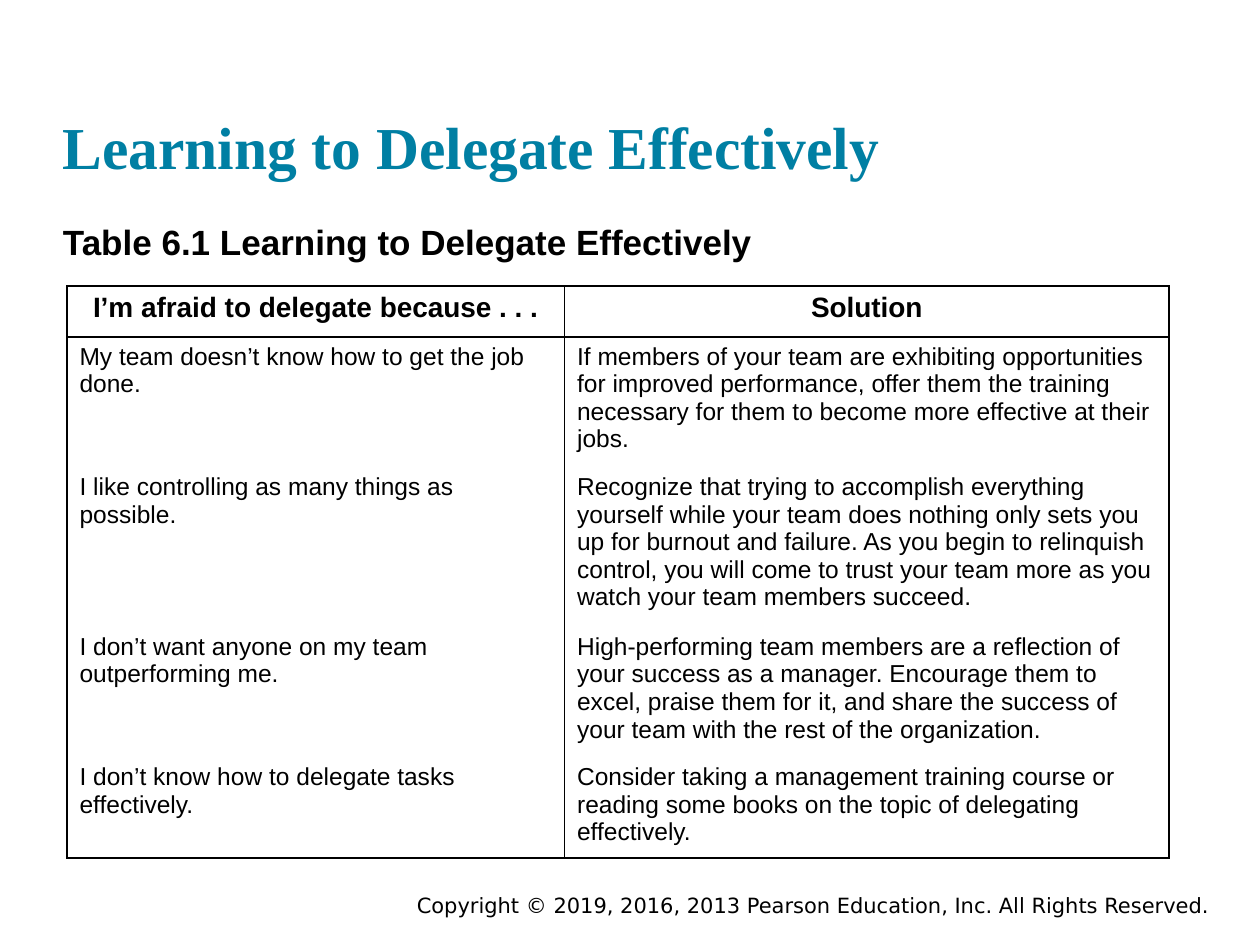
from lxml.etree import SubElement
from pptx import Presentation
from pptx.dml.color import RGBColor
from pptx.enum.text import MSO_ANCHOR as ANCHOR, PP_ALIGN as ALIGN
from pptx.oxml.ns import qn
from pptx.util import Cm, Pt

BLACK, TEAL = "000000", "007FA3"
COL_WIDTHS = [10.03, 12.19]
ROW_HEIGHTS = [1.02, 2.44, 2.69, 2.21, 1.7]
ROWS = [
    ("I’m afraid to delegate because . . .", "Solution"),
    ("My team doesn’t know how to get the job done.",
     "If members of your team are exhibiting opportunities for improved performance, "
     "offer them the training necessary for them to become more effective at their jobs."),
    ("I like controlling as many things as possible.",
     "Recognize that trying to accomplish everything yourself while your team does "
     "nothing only sets you up for burnout and failure. As you begin to relinquish "
     "control, you will come to trust your team more as you watch your team members succeed."),
    ("I don’t want anyone on my team outperforming me.",
     "High-performing team members are a reflection of your success as a manager. "
     "Encourage them to excel, praise them for it, and share the success of your team "
     "with the rest of the organization."),
    ("I don’t know how to delegate tasks effectively.",
     "Consider taking a management training course or reading some books on the topic "
     "of delegating effectively."),
]


def color(hex_text):
    return RGBColor.from_string(hex_text)


def style(p, size, font="Arial", fill=BLACK, bold=False, align=ALIGN.LEFT):
    p.alignment = align
    p.font.size, p.font.name, p.font.bold = Pt(size), font, bold
    p.font.color.rgb = color(fill)


def add_text(slide, box, text, size, inset=0.0, anchor=ANCHOR.TOP, **look):
    tf = slide.shapes.add_textbox(*map(Cm, box)).text_frame
    tf.word_wrap = True
    tf.vertical_anchor = anchor
    tf.margin_left = tf.margin_right = Cm(inset)
    tf.margin_top = tf.margin_bottom = Cm(inset / 2)
    p = tf.paragraphs[0]
    p.text = text
    style(p, size, **look)


def set_borders(cell, sides):
    """Draw 1 pt black lines on the named sides (from "LRTB") and none on the others."""
    tc_pr = cell._tc.get_or_add_tcPr()
    for i, side in enumerate("LRTB"):
        ln = SubElement(tc_pr, qn(f"a:ln{side}"), w=str(Pt(1)))
        if side in sides:
            SubElement(SubElement(ln, qn("a:solidFill")), qn("a:srgbClr"), val=BLACK)
        else:
            SubElement(ln, qn("a:noFill"))
        tc_pr.insert(i, ln)


def add_delegation_table(slide, left, top):
    table = slide.shapes.add_table(
        len(ROWS), len(COL_WIDTHS), Cm(left), Cm(top),
        Cm(sum(COL_WIDTHS)), Cm(sum(ROW_HEIGHTS))).table
    table.horz_banding = False
    for col, width in zip(table.columns, COL_WIDTHS):
        col.width = Cm(width)
    for i, (row, height, texts) in enumerate(zip(table.rows, ROW_HEIGHTS, ROWS)):
        row.height = Cm(height)
        header = i == 0
        sides = "LR" + ("T" if i < 2 else "") + ("B" if i in (0, len(ROWS) - 1) else "")
        for cell, text in zip(row.cells, texts):
            cell.text = text
            cell.fill.background()
            set_borders(cell, sides)
            style(cell.text_frame.paragraphs[0], 16 if header else 14, bold=header,
                  align=ALIGN.CENTER if header else ALIGN.LEFT)


def main():
    prs = Presentation()
    prs.slide_width, prs.slide_height = Cm(25.4), Cm(19.05)
    slide = prs.slides.add_slide(prs.slide_layouts[6])
    add_text(slide, (7.49, 17.86, 17.15, 0.76),
             "Copyright © 2019, 2016, 2013 Pearson Education, Inc. All Rights Reserved.",
             12, inset=0.25, font="DejaVu Sans", align=ALIGN.RIGHT)
    add_text(slide, (1.27, 0.61, 22.86, 3.05), "Learning to Delegate Effectively", 34,
             anchor=ANCHOR.BOTTOM, font="Times New Roman", fill=TEAL, bold=True)
    add_text(slide, (1.27, 4.45, 22.86, 1.07),
             "Table 6.1 Learning to Delegate Effectively", 20, bold=True)
    add_delegation_table(slide, 1.35, 5.77)
    prs.save("out.pptx")


if __name__ == "__main__":
    main()
